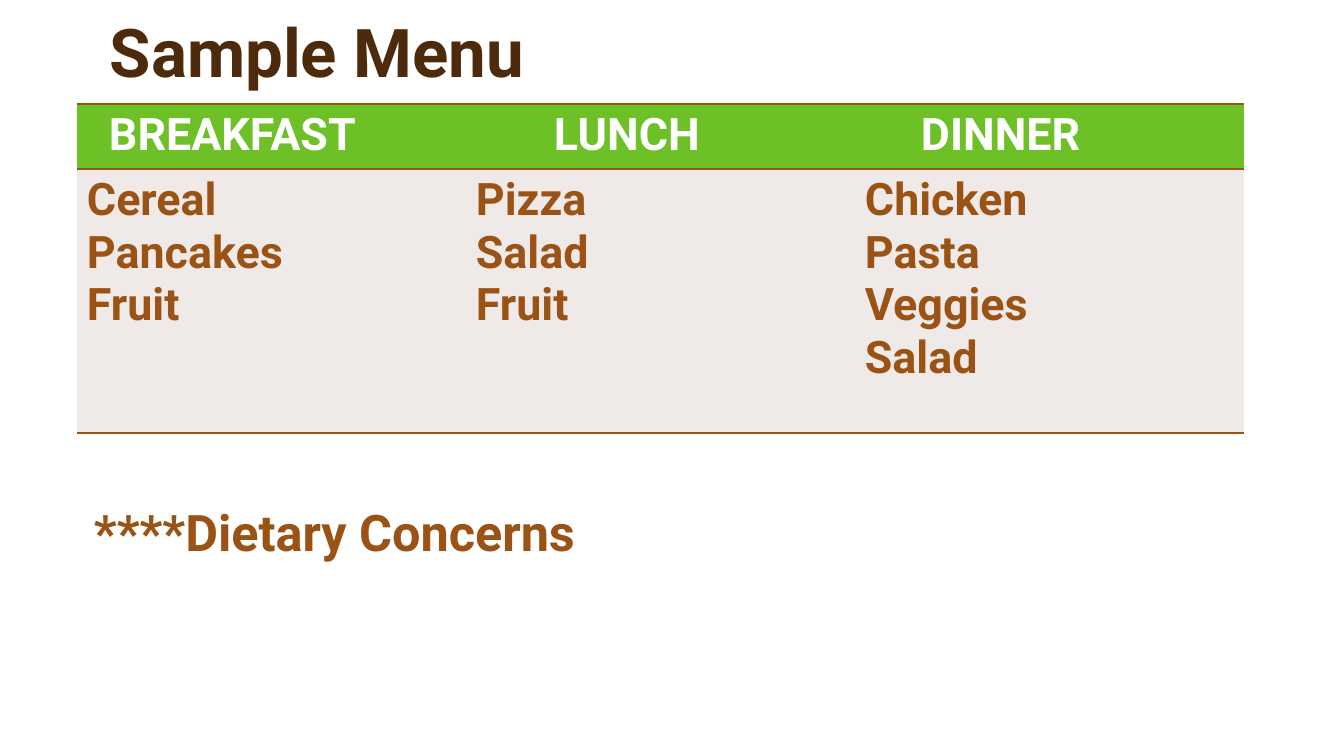
from lxml import etree
from pptx import Presentation
from pptx.dml.color import RGBColor
from pptx.enum.text import MSO_ANCHOR
from pptx.oxml.ns import qn
from pptx.util import Pt

BOTTOM = MSO_ANCHOR.BOTTOM
EMU_PER_PX = 914400 / 100.8
FONT = "Roboto"
NO_GRID_STYLE = "{2D5ABB26-0587-4C30-8999-92F81FD0307C}"
COLORS = {
    "title": "4D2A0B",
    "brown": "9A5315",
    "green": "6DC025",
    "cream": "EFE9E8",
    "white": "FFFFFF",
}
# Heading, heading indent in px, dishes
MEALS = [
    ("BREAKFAST", 22, ["Cereal", "Pancakes", "Fruit"]),
    ("LUNCH", 78, ["Pizza", "Salad", "Fruit"]),
    ("DINNER", 56, ["Chicken", "Pasta", "Veggies", "Salad"]),
]
COLUMN_WIDTH = 389
ROW_HEIGHTS = [65, 264]
CELL_MARGIN = 10


def px(length):
    return round(length * EMU_PER_PX)


def write(frame, text, size, color):
    """Fill a text frame with bold text, one paragraph per line."""
    frame.word_wrap = True
    frame.text = text
    for para in frame.paragraphs:
        for span in para.runs:
            span.font.name = FONT
            span.font.size = Pt(size)
            span.font.bold = True
            span.font.color.rgb = RGBColor.from_string(COLORS[color])


deck = Presentation()
deck.slide_width, deck.slide_height = px(1344), px(756)
page = deck.slides.add_slide(deck.slide_layouts[6])

title_box = page.shapes.add_textbox(px(100), 0, px(1109), px(97))
title_box.text_frame.vertical_anchor = BOTTOM
write(title_box.text_frame, "Sample Menu", 48, "title")
title_box.text_frame.paragraphs[0].line_spacing = 0.9

table_frame = page.shapes.add_table(
    len(ROW_HEIGHTS), len(MEALS), px(77), px(104),
    px(COLUMN_WIDTH * len(MEALS)), px(sum(ROW_HEIGHTS)))
menu = table_frame.table
menu._tbl.tblPr.find(qn("a:tableStyleId")).text = NO_GRID_STYLE
for row, height in zip(menu.rows, ROW_HEIGHTS):
    row.height = px(height)

for column, (heading, indent, dishes) in enumerate(MEALS):
    menu.columns[column].width = px(COLUMN_WIDTH)
    cells = [
        (heading, indent, "white", "green", ("a:lnT", "a:lnB")),
        ("\n".join(dishes), 0, "brown", "cream", ("a:lnT", "a:lnB")),
    ]
    for row, (text, inset, color, fill, edges) in enumerate(cells):
        cell = menu.cell(row, column)
        write(cell.text_frame, text, 32, color)
        cell.margin_left = px(CELL_MARGIN + inset)
        properties = cell._tc.get_or_add_tcPr()
        for edge in edges:
            line = etree.SubElement(properties, qn(edge), w=str(Pt(2)))
            line_fill = etree.SubElement(line, qn("a:solidFill"))
            etree.SubElement(line_fill, qn("a:srgbClr"), val=COLORS["brown"])
        cell.fill.solid()
        cell.fill.fore_color.rgb = RGBColor.from_string(COLORS[fill])

note_box = page.shapes.add_textbox(px(84), px(496), px(1099), px(72))
write(note_box.text_frame, "****Dietary Concerns", 36, "brown")

deck.save("out.pptx")
